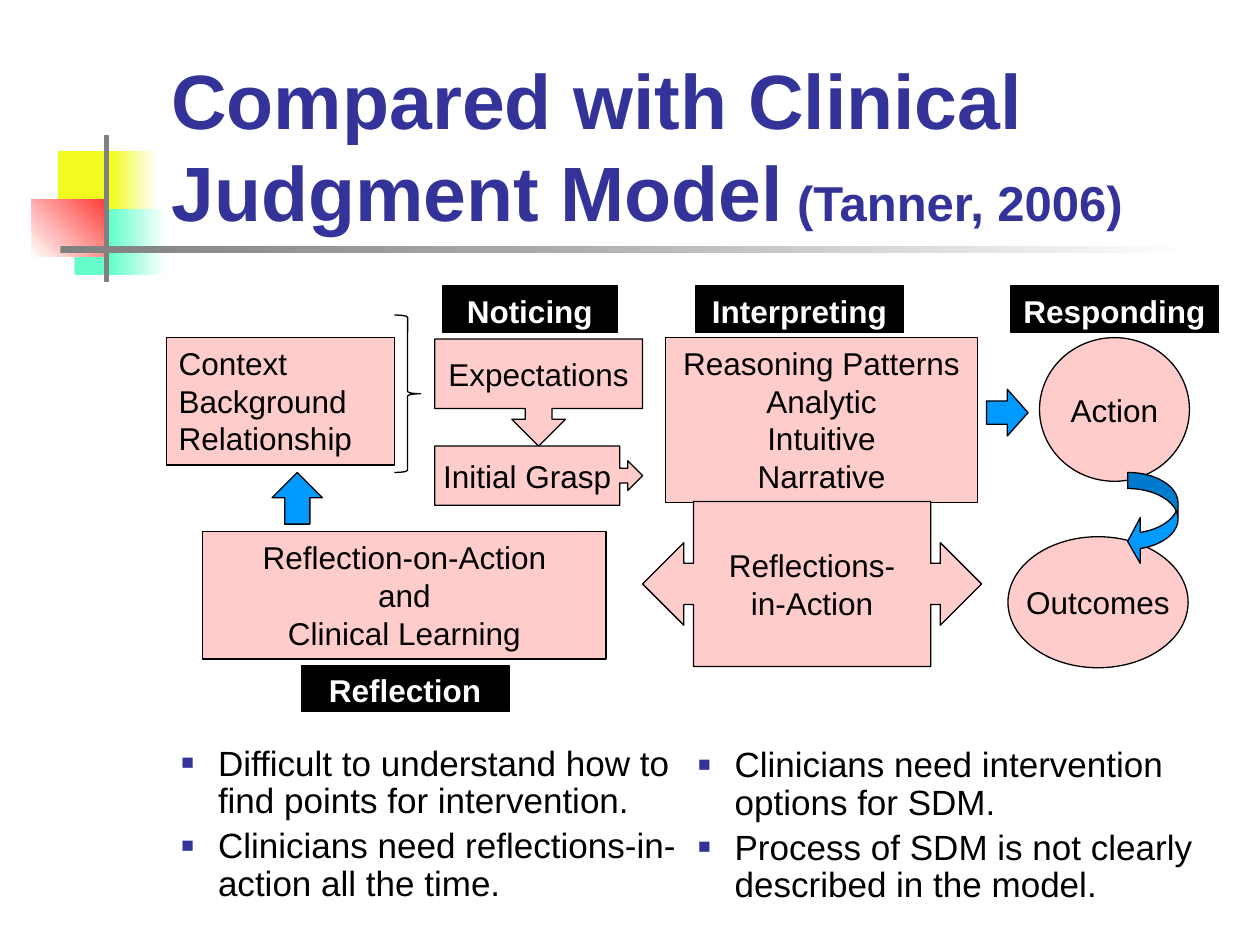
from lxml.etree import SubElement
from pptx import Presentation
from pptx.dml.color import RGBColor
from pptx.enum.shapes import MSO_SHAPE
from pptx.enum.text import MSO_ANCHOR, MSO_AUTO_SIZE, PP_ALIGN
from pptx.oxml.ns import qn
from pptx.util import Pt

PX = 9144  # EMU in one px, 100 px to the inch
COLORS = {
    "navy": "333399", "black": "000000", "white": "FFFFFF", "pink": "FFCCCC",
    "blue": "0099FF", "yellow": "F1FB1F", "mint": "66FFCC", "red": "FE3934",
    "gray": "808080", "silver": "A6A6A6",
}
FONT = "Arial"


def rgb(name):
    return RGBColor.from_string(COLORS[name])


def px(*lengths):
    return [length * PX for length in lengths]


def write(para, text, color="black", **formats):
    span = para.add_run()
    span.text = text
    span.font.color.rgb = rgb(color)
    for key, value in {"name": FONT, "size": Pt(18), **formats}.items():
        setattr(span.font, key, value)


def add_box(page, area, kind, fill=None, line="black", adjust=()):
    """A preset shape at (left, top, width, height) inside an area's origin."""
    box = page.shapes.add_shape(kind, *px(*area))
    box.shadow.inherit = False
    for index, value in enumerate(adjust):
        box.adjustments[index] = value
    if fill:
        box.fill.solid()
        box.fill.fore_color.rgb = rgb(fill)
    else:
        box.fill.background()
    if line:
        box.line.color.rgb = rgb(line)
        box.line.width = Pt(0.75)
    else:
        box.line.fill.background()
    return box


def add_label(box, lines, align=PP_ALIGN.CENTER, color="black", bold=False, **frame_formats):
    frame = box.text_frame
    formats = {"word_wrap": False, "vertical_anchor": MSO_ANCHOR.MIDDLE, **frame_formats}
    for key, value in formats.items():
        setattr(frame, key, value)
    for index, line in enumerate(lines):
        para = frame.add_paragraph() if index else frame.paragraphs[0]
        para.alignment = align
        write(para, line, color, bold=bold)


def set_gradient(box, stops, angle=0):
    box.fill.gradient()
    box.fill.gradient_angle = angle
    stop_list = box._element.spPr.find(qn("a:gradFill")).find(qn("a:gsLst"))
    for stop in list(stop_list):
        stop_list.remove(stop)
    for position, name in stops:
        stop = SubElement(stop_list, qn("a:gs"), pos=str(position * 1000))
        SubElement(stop, qn("a:srgbClr"), val=COLORS[name])


def add_decoration(page, left, top):
    """Coloured squares crossed by a vertical bar and a fading rule."""
    parts = [
        ((21, 12, 48, 52), "yellow", None, None, 0),
        ((63, 12, 36, 52), None, None, [(0, "yellow"), (100, "white")], 0),
        ((34, 58, 73, 52), None, None, [(0, "mint"), (39, "mint"), (100, "white")], 0),
        ((0, 50, 61, 46), None, None, [(0, "white"), (100, "red")], 45),
        ((58, 0, 3, 115), "gray", "gray", None, 0),
        ((23, 87, 900, 6), None, None, [(0, "gray"), (39, "silver"), (100, "white")], 0),
    ]
    for (x, y, width, height), fill, line, stops, angle in parts:
        box = add_box(page, (left + x, top + y, width, height), MSO_SHAPE.RECTANGLE, fill, line)
        if stops:
            set_gradient(box, stops, angle)


def place(holder, area):
    holder.left, holder.top, holder.width, holder.height = px(*area)
    holder.text_frame.auto_size = MSO_AUTO_SIZE.NONE
    holder.text_frame.word_wrap = True


def fill_title(holder, area):
    place(holder, area)
    holder.text_frame.vertical_anchor = MSO_ANCHOR.BOTTOM
    para = holder.text_frame.paragraphs[0]
    para.alignment = PP_ALIGN.LEFT
    write(para, "Compared with Clinical Judgment Model", "navy", size=Pt(44), bold=True)
    write(para, " (Tanner, 2006)", "navy", size=Pt(28), bold=True)


def fill_list(holder, area, items):
    place(holder, area)
    frame = holder.text_frame
    for index, item in enumerate(items):
        para = frame.add_paragraph() if index else frame.paragraphs[0]
        para.line_spacing = 0.9
        para.space_before = Pt(4)
        props = para._p.get_or_add_pPr()
        props.set("marL", str(29 * PX))
        props.set("indent", str(-29 * PX))
        SubElement(SubElement(props, qn("a:buClr")), qn("a:srgbClr"), val=COLORS["navy"])
        SubElement(props, qn("a:buSzPct"), val="60000")
        SubElement(props, qn("a:buFont"), typeface=FONT)
        SubElement(props, qn("a:buChar"), char="■")
        write(para, item, size=Pt(20))


def add_model(page, left, top):
    """The judgment model: stages, phase names and the arrows between them."""
    def at(x, y, width, height):
        return left + x, top + y, width, height

    # Text boxes, filled from the top
    for area, align, lines in [
        ((0, 41, 181, 101), PP_ALIGN.LEFT, ["Context", "Background", "Relationship"]),
        ((396, 41, 248, 131), PP_ALIGN.CENTER,
         ["Reasoning Patterns", "Analytic", "Intuitive", "Narrative"]),
        ((29, 195, 320, 101), PP_ALIGN.CENTER,
         ["Reflection-on-Action", "and", "Clinical Learning"]),
    ]:
        box = add_box(page, at(*area), MSO_SHAPE.RECTANGLE, "pink")
        add_label(box, lines, align, word_wrap=True, vertical_anchor=MSO_ANCHOR.TOP)

    # Callouts and ovals
    for area, kind, adjust, lines in [
        ((213, 42, 165, 85), MSO_SHAPE.DOWN_ARROW_CALLOUT, (), ["Expectations"]),
        ((213, 127, 165, 47), MSO_SHAPE.RIGHT_ARROW_CALLOUT,
         (0.25, 0.25, 0.25, 0.89), ["Initial Grasp"]),
        ((693, 41, 119, 114), MSO_SHAPE.OVAL, (), ["Action"]),
        ((668, 199, 143, 104), MSO_SHAPE.OVAL, (), ["Outcomes"]),
        ((378, 171, 269, 131), MSO_SHAPE.LEFT_RIGHT_ARROW_CALLOUT,
         (0.25, 0.25, 0.25, 0.7), ["Reflections-", "in-Action"]),
    ]:
        box = add_box(page, at(*area), kind, "pink", adjust=adjust)
        add_label(box, lines, margin_left=0, margin_right=0)

    # Phase names
    for area, name in [
        ((219, 0, 139, 37), "Noticing"),
        ((420, 0, 165, 37), "Interpreting"),
        ((670, 0, 165, 37), "Responding"),
        ((107, 301, 165, 37), "Reflection"),
    ]:
        box = add_box(page, at(*area), MSO_SHAPE.RECTANGLE, "black")
        add_label(box, [name], color="white", bold=True, vertical_anchor=MSO_ANCHOR.TOP)

    # Arrows and brace
    for area, kind, fill, adjust in [
        ((651, 82, 33, 37), MSO_SHAPE.RIGHT_ARROW, "blue", ()),
        ((84, 148, 40, 41), MSO_SHAPE.UP_ARROW, "blue", ()),
        ((763, 148, 40, 73), MSO_SHAPE.CURVED_LEFT_ARROW, "blue", (0.32, 0.91, 0.25)),
        ((181, 23, 21, 125), MSO_SHAPE.RIGHT_BRACE, None, ()),
    ]:
        add_box(page, at(*area), kind, fill, adjust=adjust)


def main():
    deck = Presentation()
    deck.slide_width, deck.slide_height = px(1000, 750)
    page = deck.slides.add_slide(deck.slide_layouts[3])  # title and two lists
    title, left_list, right_list = page.placeholders
    add_decoration(page, 25, 108)
    fill_title(title, (126, 68, 852, 125))
    add_model(page, 132, 227)
    fill_list(left_list, (134, 587, 423, 91), [
        "Difficult to understand how to find points for intervention.",
        "Clinicians need reflections-in-action all the time.",
    ])
    fill_list(right_list, (544, 588, 423, 91), [
        "Clinicians need intervention options for SDM.",
        "Process of SDM is not clearly described in the model.",
    ])
    deck.save("out.pptx")


if __name__ == "__main__":
    main()
